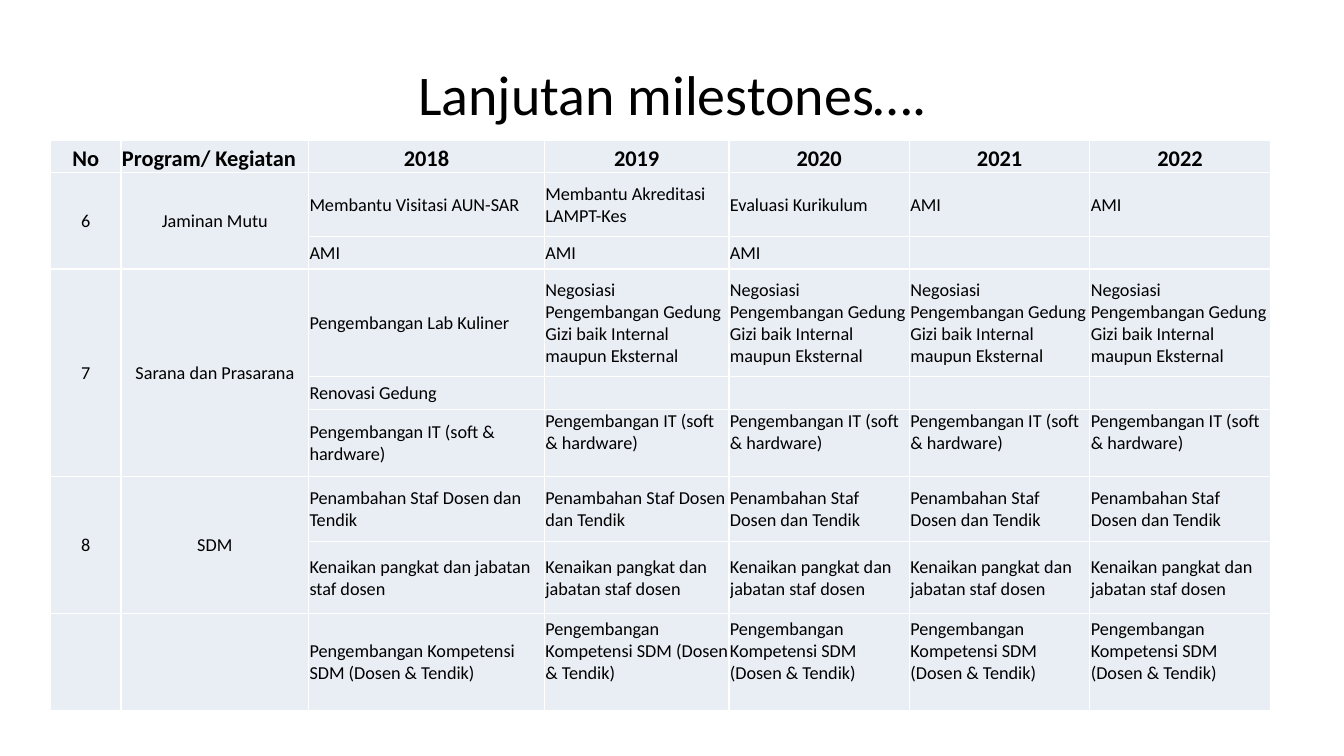
from lxml import etree
from pptx import Presentation
from pptx import util as u
from pptx.dml.color import RGBColor
from pptx.enum import text
from pptx.oxml import ns

COLORS = {"ink": "000000", "cell": "E9EDF4", "rule": "FFFFFF"}
ALIGN = {"l": text.PP_ALIGN.LEFT, "c": text.PP_ALIGN.CENTER}
MID = text.MSO_ANCHOR.MIDDLE
LOW = text.MSO_ANCHOR.BOTTOM


class Deck:
    font = "Calibri"

    def __init__(self, wide, high):
        self.show = Presentation()
        self.show.slide_width = u.Inches(wide)
        self.show.slide_height = u.Inches(high)
        self.slide = self.show.slides.add_slide(self.show.slide_layouts[6])

    def label(self, frame, words, size, align, bold=False):
        frame.word_wrap = True
        para = frame.paragraphs[0]
        para.alignment = ALIGN[align]
        run = para.add_run()
        run.text = words
        run.font.name = self.font
        run.font.size = u.Pt(size)
        run.font.bold = bold
        run.font.color.rgb = RGBColor.from_string(COLORS["ink"])

    def title(self, words, *place):
        box = self.slide.shapes.add_textbox(*map(u.Inches, place))
        box.text_frame.vertical_anchor = MID
        self.label(box.text_frame, words, 40, "c")

    def border(self, cell):
        props = cell._tc.get_or_add_tcPr()
        for spot, side in enumerate(("lnL", "lnR", "lnT", "lnB")):
            line = etree.Element(ns.qn("a:" + side), w=str(u.Pt(1)))
            fill = etree.SubElement(line, ns.qn("a:solidFill"))
            etree.SubElement(fill, ns.qn("a:srgbClr"), val=COLORS["rule"])
            props.insert(spot, line)

    def cell(self, cell, anchor, base):
        cell.margin_left = cell.margin_right = cell.margin_top = u.Inches(0.01)
        cell.margin_bottom = u.Inches(base)
        cell.vertical_anchor = anchor
        cell.fill.solid()
        cell.fill.fore_color.rgb = RGBColor.from_string(COLORS["cell"])
        self.border(cell)

    def table(self, left, top, cols, rows, data, spans, raised):
        place = map(u.Inches, (left, top, sum(cols), sum(rows)))
        grid = self.slide.shapes.add_table(len(rows), len(cols), *place).table
        grid.first_row = grid.horz_banding = False
        for col, wide in zip(grid.columns, cols):
            col.width = u.Inches(wide)
        for r, (row, high) in enumerate(zip(data, rows)):
            grid.rows[r].height = u.Inches(high)
            head = r == 0
            for c, words in enumerate(row):
                cell = grid.cell(r, c)
                base = 0.22 if r in raised and c > 2 else 0
                self.cell(cell, LOW if head else MID, base)
                if words:
                    center = c != 1 if head else c < 2
                    self.label(cell.text_frame, words, 16 if head else 13,
                               "c" if center else "l", head)
        for first, last in spans:
            for c in range(2):
                grid.cell(first, c).merge(grid.cell(last, c))


def main():
    deck = Deck(13.33, 7.5)
    deck.title("Lanjutan milestones….", 0.67, 0.3, 12, 1.25)
    build = "Negosiasi Pengembangan Gedung Gizi baik Internal maupun Eksternal"
    tech = "Pengembangan IT (soft & hardware)"
    staff = "Penambahan Staf Dosen dan Tendik"
    rank = "Kenaikan pangkat dan jabatan staf dosen"
    skill = "Pengembangan Kompetensi SDM (Dosen & Tendik)"
    data = [
        ["No", "Program/ Kegiatan"] + [str(y) for y in range(2018, 2023)],
        ["6", "Jaminan Mutu", "Membantu Visitasi AUN-SAR",
         "Membantu Akreditasi LAMPT-Kes", "Evaluasi Kurikulum", "AMI", "AMI"],
        ["", ""] + ["AMI"] * 3 + [""] * 2,
        ["7", "Sarana dan Prasarana", "Pengembangan Lab Kuliner"] + [build] * 4,
        ["", "", "Renovasi Gedung"] + [""] * 4,
        ["", ""] + [tech] * 5,
        ["8", "SDM"] + [staff] * 5,
        ["", ""] + [rank] * 5,
        ["", ""] + [skill] * 5,
    ]
    cols = [0.7, 1.86, 2.34, 1.83] + [1.79] * 3
    rows = [0.32, 0.64, 0.32, 1.07, 0.32, 0.67, 0.64, 0.72, 0.96]
    deck.table(0.5, 1.39, cols, rows, data, [(1, 2), (3, 5), (6, 7)], (5, 8))
    deck.show.save("out.pptx")


if __name__ == "__main__":
    main()
